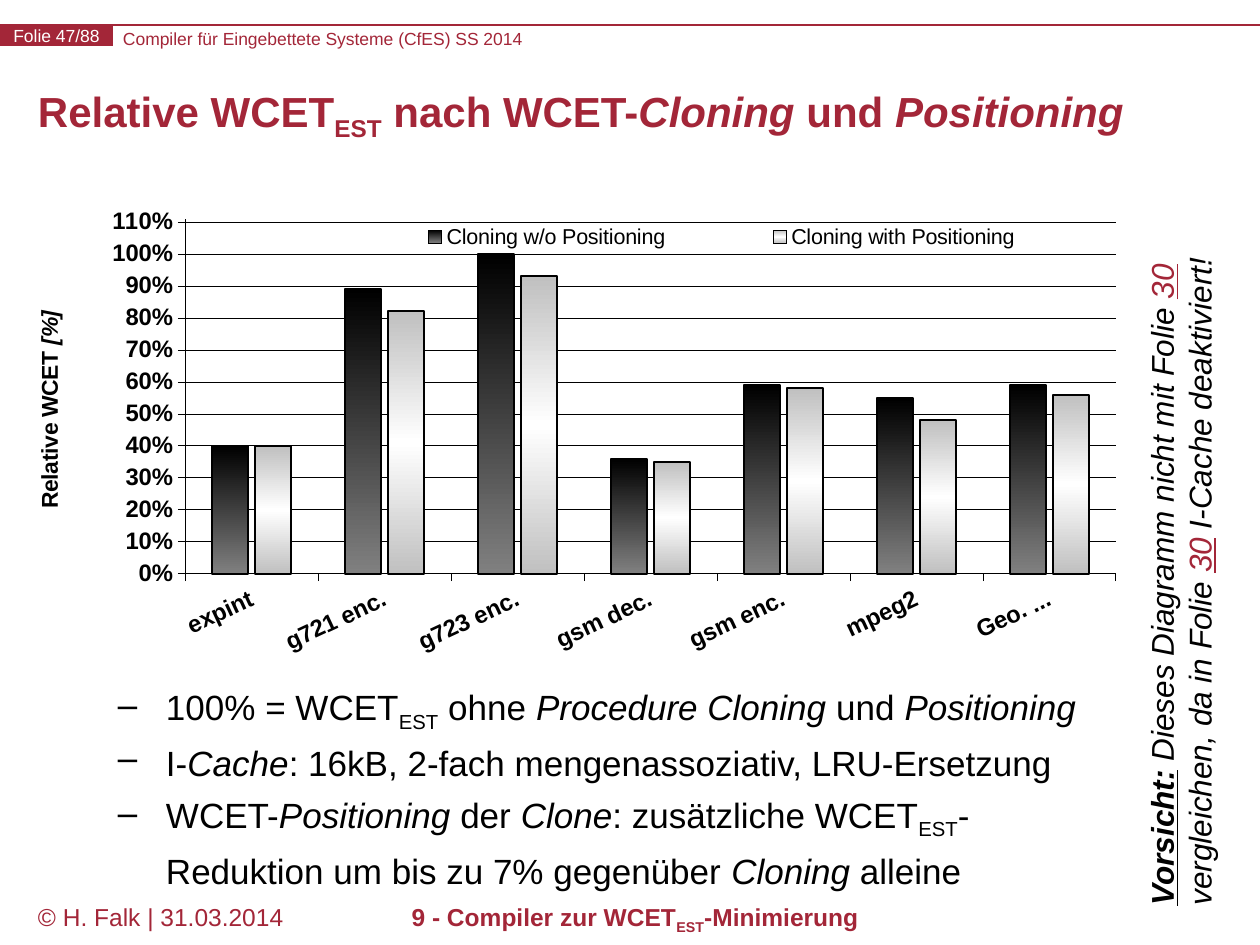
from lxml import etree
from pptx import Presentation
from pptx.chart.data import CategoryChartData
from pptx.dml.color import RGBColor
from pptx.enum.chart import XL_CHART_TYPE, XL_LEGEND_POSITION, XL_TICK_MARK
from pptx.enum.shapes import MSO_CONNECTOR, MSO_SHAPE
from pptx.enum.text import MSO_ANCHOR, PP_ALIGN
from pptx.oxml import parse_xml
from pptx.oxml.ns import nsdecls, qn
from pptx.util import Inches, Pt

LEFT, CENTER = PP_ALIGN.LEFT, PP_ALIGN.CENTER
TOP, MIDDLE = MSO_ANCHOR.TOP, MSO_ANCHOR.MIDDLE
RED = RGBColor(0xA3, 0x26, 0x38)
BLACK = RGBColor(0, 0, 0)
WHITE = RGBColor(0xFF, 0xFF, 0xFF)
FONT = "Arial"
PX = Inches(1) / 126

ITALIC = {"italic": True}
SUB = {"baseline": -25000}
LINK = {"color": RED, "underline": True}


def write(frame, paragraphs, size, color=BLACK, bold=False, italic=False,
          align=LEFT, anchor=TOP, wrap=True, margins=(13, 6), spacing=None):
    """Fill a text frame; each paragraph is a list of (text, run format)."""
    frame.word_wrap = wrap
    frame.vertical_anchor = anchor
    frame.margin_left = frame.margin_right = round(margins[0] * PX)
    frame.margin_top = frame.margin_bottom = round(margins[1] * PX)
    for i, pieces in enumerate(paragraphs):
        paragraph = frame.add_paragraph() if i else frame.paragraphs[0]
        paragraph.alignment = align
        paragraph.line_spacing = spacing
        for text, extra in pieces:
            run = paragraph.add_run()
            run.text = text
            font = run.font
            font.name, font.size = FONT, Pt(size)
            font.color.rgb = extra.get("color", color)
            font.bold = extra.get("bold", bold)
            font.italic = extra.get("italic", italic)
            font.underline = extra.get("underline", False)
            if "baseline" in extra:
                font._element.set("baseline", str(extra["baseline"]))


def place(parent, index, **fractions):
    """Give a chart part a manual layout in fractions of the chart."""
    for old in parent.findall(qn("c:layout")):
        parent.remove(old)
    layout = etree.Element(qn("c:layout"))
    manual = etree.SubElement(layout, qn("c:manualLayout"))
    for tag, value in fractions.items():
        etree.SubElement(manual, qn("c:" + tag)).set("val", str(value))
    parent.insert(index, layout)


prs = Presentation()
prs.slide_width, prs.slide_height = round(1260 * PX), round(945 * PX)
slide = prs.slides.add_slide(prs.slide_layouts[5])
shapes = slide.shapes

# Header rule and slide number
rule = shapes.add_connector(MSO_CONNECTOR.STRAIGHT, 0, round(25 * PX),
                            round(1260 * PX), round(25 * PX))
rule.line.color.rgb = RED
rule.line.width = Pt(0.75)
etree.SubElement(rule._element.spPr, qn("a:effectLst"))

number = shapes.add_shape(MSO_SHAPE.RECTANGLE, 0, round(25 * PX),
                          round(113 * PX), round(21 * PX))
number.shadow.inherit = False
number.fill.solid()
number.fill.fore_color.rgb = RED
number.line.fill.background()
write(number.text_frame, [[("Folie 47/88", {})]], 10, WHITE, align=CENTER,
      anchor=MIDDLE, wrap=False, margins=(0, 0))

# Title
title = shapes.title
title.left, title.top, title.width, title.height = (
    round(v * PX) for v in (25, 76, 1211, 91))
write(title.text_frame, [[
    ("Relative WCET", {}), ("EST", SUB), (" nach WCET-", {}),
    ("Cloning", ITALIC), (" und ", {}), ("Positioning", ITALIC),
]], 24, RED, bold=True, anchor=MIDDLE, spacing=Pt(24))

# Text blocks: course, footer, findings and warning
course = [[("Compiler für Eingebettete Systeme (CfES) SS 2014", {})]]
author = [[("© H. Falk | 31.03.2014", {})]]
chapter = [[("9 - Compiler zur WCET", {}), ("EST", SUB), ("-Minimierung", {})]]
findings = [
    [("100% = WCET", {}), ("EST", SUB), (" ohne ", {}),
     ("Procedure Cloning", ITALIC), (" und ", {}), ("Positioning", ITALIC)],
    [("I-", {}), ("Cache", ITALIC),
     (": 16kB, 2-fach mengenassoziativ, LRU-Ersetzung", {})],
    [("WCET-", {}), ("Positioning", ITALIC), (" der ", {}), ("Clone", ITALIC),
     (": zusätzliche WCET", {}), ("EST", SUB),
     ("-Reduktion um bis zu 7% gegenüber ", {}), ("Cloning", ITALIC),
     (" alleine", {})],
]
warning = [[
    ("Vorsicht:", {"bold": True, "underline": True}),
    (" Dieses Diagramm nicht mit Folie ", {}), ("30", LINK),
    (" vergleichen, da in Folie ", {}), ("30", LINK),
    (" I-Cache deaktiviert!", {}),
]]
blocks = [
    ((123, 28, 832, 21), 0, course, {"size": 10, "color": RED, "margins": (0, 0)}),
    ((25, 896, 277, 63), 0, author, {"size": 14, "color": RED}),
    ((253, 896, 764, 63), 0, chapter,
     {"size": 14, "color": RED, "bold": True, "align": CENTER}),
    ((105, 670, 1022, 217), 0, findings, {"size": 20, "spacing": 1.2}),
    ((834, 527, 694, 89), 270, warning, {"size": 18, "italic": True}),
]
for box, angle, paragraphs, style in blocks:
    block = shapes.add_textbox(*(round(v * PX) for v in box))
    block.rotation = angle
    write(block.text_frame, paragraphs, **style)
    if paragraphs is findings:
        for paragraph in block.text_frame.paragraphs:
            props = paragraph._p.get_or_add_pPr()
            props.set("marL", str(round(48 * PX)))
            props.set("indent", str(round(-48 * PX)))
            etree.SubElement(props, qn("a:buChar")).set("char", "–")

# Chart of relative WCET
data = CategoryChartData(number_format="0%")
data.categories = ["expint", "g721 enc.", "g723 enc.", "gsm dec.",
                   "gsm enc.", "mpeg2", "Geo. Mean"]
data.add_series("Cloning w/o Positioning",
                [0.4, 0.89, 1, 0.36, 0.59, 0.55, 0.59])
data.add_series("Cloning with Positioning",
                [0.4, 0.82, 0.93, 0.35, 0.58, 0.48, 0.56])
chart = shapes.add_chart(XL_CHART_TYPE.COLUMN_CLUSTERED,
                         *(round(v * PX) for v in (21, 195, 1095, 466)),
                         data).chart
chart.has_title = False
chart.font.name, chart.font.size = FONT, Pt(12.8)
chart.font.color.rgb = BLACK
bars = chart.plots[0]
bars.gap_width, bars.overlap = 150, -20
bars.vary_by_categories = False
place(chart._chartSpace.chart.plotArea, 0, layoutTarget="inner", xMode="edge",
      yMode="edge", x=0.152, y=0.051, w=0.85, h=0.762)

# Bar gradients, top to bottom
gradients = [[(0, "000000"), (100, "808080")],
             [(0, "C0C0C0"), (50, "FFFFFF"), (100, "C0C0C0")]]
for series, stops in zip(bars.series, gradients):
    series.invert_if_negative = False
    series.format.line.color.rgb = BLACK
    series.format.line.width = Pt(1.14)
    stop_xml = "".join(
        f'<a:gs pos="{pos * 1000}"><a:srgbClr val="{color}"/></a:gs>'
        for pos, color in stops)
    series._element.get_or_add_spPr().insert(0, parse_xml(
        f'<a:gradFill {nsdecls("a")}><a:gsLst>{stop_xml}</a:gsLst>'
        '<a:lin ang="5400000" scaled="0"/></a:gradFill>'))

# Axes
programs, wcet = chart.category_axis, chart.value_axis
wcet.minimum_scale, wcet.maximum_scale, wcet.major_unit = 0, 1.11, 0.1
wcet.has_major_gridlines = True
wcet.tick_labels.number_format = "0%"
wcet.tick_labels.number_format_is_linked = False
for axis in (programs, wcet):
    axis.major_tick_mark = XL_TICK_MARK.OUTSIDE
    axis.minor_tick_mark = XL_TICK_MARK.NONE
    labels = axis.tick_labels.font
    labels.name, labels.size, labels.bold = FONT, Pt(13.6), True
    labels.color.rgb = BLACK
for line in (programs.format.line, wcet.format.line,
             wcet.major_gridlines.format.line):
    line.color.rgb = BLACK
    line.width = Pt(0.28)
programs._element.find(qn("c:txPr")).find(qn("a:bodyPr")).set("rot", "-1500000")

write(wcet.axis_title.text_frame,
      [[("Relative WCET ", {}), ("[%]", ITALIC)]], 13.1, bold=True, align=CENTER)
axis_title = wcet.axis_title._element
turn = axis_title.find(".//" + qn("a:bodyPr"))
turn.set("rot", "-5400000")
turn.set("vert", "horz")
place(axis_title, 1, xMode="edge", yMode="edge", x=0.01, y=0.24)

# Legend
chart.has_legend = True
legend = chart.legend
legend.position = XL_LEGEND_POSITION.RIGHT
legend.include_in_layout = False
legend.font.name, legend.font.size = FONT, Pt(12.3)
legend.font.color.rgb = BLACK
place(legend._element, 1, xMode="edge", yMode="edge",
      x=0.28, y=0.06, w=0.72, h=0.06)

prs.save("out.pptx")
